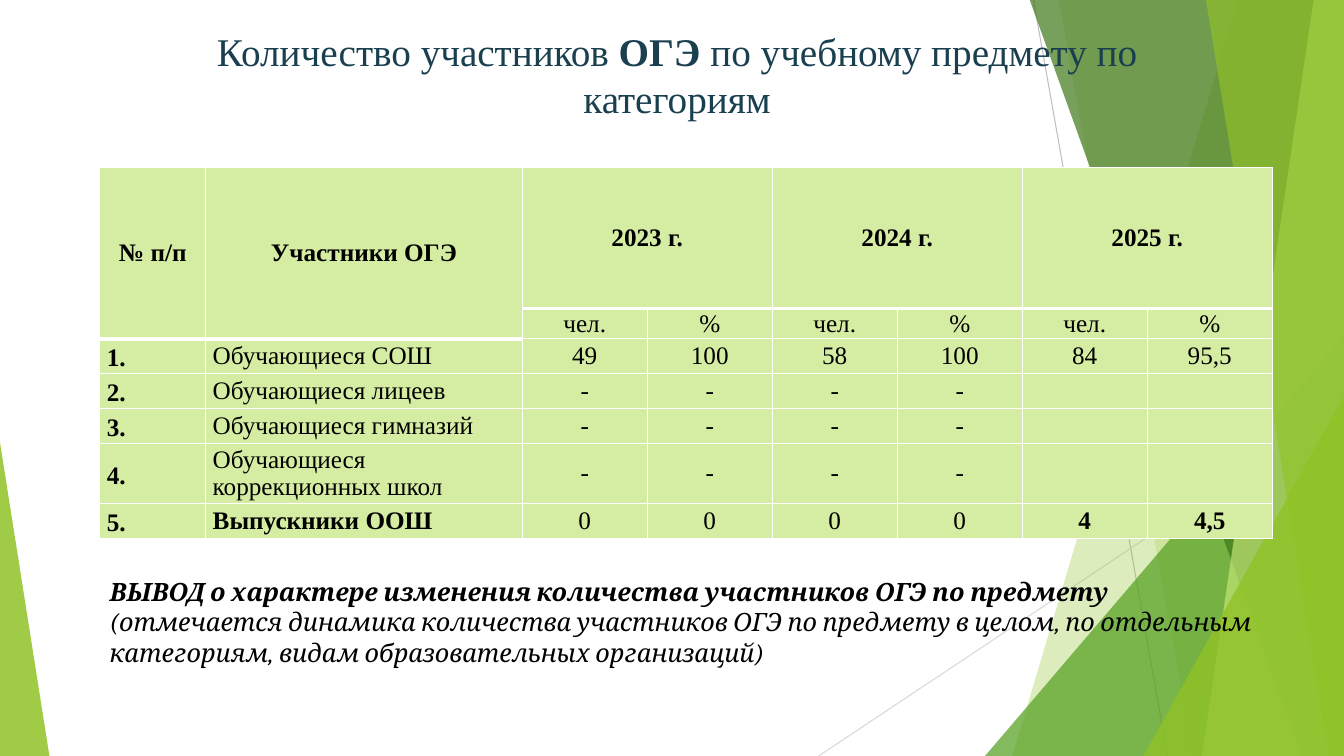
"""Build a slide with a table of exam participants by category over three years."""
from lxml import etree
from pptx import Presentation
from pptx.dml.color import RGBColor
from pptx.enum.shapes import MSO_CONNECTOR, MSO_SHAPE
from pptx.enum.text import MSO_ANCHOR, PP_ALIGN
from pptx.oxml.ns import qn
from pptx.util import Inches, Pt

STRAIGHT = MSO_CONNECTOR.STRAIGHT
TRIANGLE = MSO_SHAPE.ISOSCELES_TRIANGLE
CENTER, LEFT = PP_ALIGN.CENTER, PP_ALIGN.LEFT
MIDDLE = MSO_ANCHOR.MIDDLE
SERIF = "Times New Roman"


def rgb(color):
    return RGBColor.from_string(color)


def paint(facet, color, opacity):
    facet.shadow.inherit = False
    facet.line.fill.background()
    facet.fill.solid()
    facet.fill.fore_color.rgb = rgb(color)
    tint = facet.fill._xPr.find(".//" + qn("a:srgbClr"))
    etree.SubElement(tint, qn("a:alpha"), val=str(opacity * 1000))


prs = Presentation()
prs.slide_width, prs.slide_height = Inches(13.33), Inches(7.5)
slide = prs.slides.add_slide(prs.slide_layouts[6])
shapes = slide.shapes

for x1, y1, x2, y2, color in [(10.25, 0, 11.58, 7.5, "BFBFBF"),
                              (13.33, 4.03, 8.12, 7.5, "D9D9D9")]:
    ray = shapes.add_connector(STRAIGHT, Inches(x1), Inches(y1), Inches(x2), Inches(y2))
    ray.line.color.rgb = rgb(color)
    ray.line.width = Pt(0.75)
    etree.SubElement(ray._element.spPr, qn("a:effectLst"))

facets = [
    ("band", 12.28, 10.04, "90C226", 30),
    ("band", 10.5, 11.83, "90C226", 20),
    ("triangle", 9.77, 3.33, 3.56, 1, "54A021", 72),
    ("band", 10.21, 12.91, "3F7819", 70),
    ("band", 13.03, 11.92, "C0E474", 70),
    ("band", 11.96, 13.18, "90C226", 65),
    ("triangle", 11.34, 3.93, 1.99, 1, "90C226", 80),
    ("triangle", 0, 4.39, 0.49, 0, "90C226", 85),
]
for kind, *geometry, color, opacity in facets:
    if kind == "band":
        top_x, bottom_x = geometry
        outline = shapes.build_freeform(Inches(top_x), Inches(-0.01))
        corners = [(13.33, -0.01), (13.33, 7.5), (bottom_x, 7.5)]
        outline.add_line_segments([(Inches(x), Inches(y)) for x, y in corners], close=True)
        facet = outline.convert_to_shape()
    else:
        left, top, width, apex = geometry
        facet = shapes.add_shape(TRIANGLE, Inches(left), Inches(top),
                                 Inches(width), Inches(7.5 - top))
        facet.adjustments[0] = apex
    paint(facet, color, opacity)

title = shapes.add_textbox(Inches(1.98), Inches(0.22), Inches(9.4), Inches(1.44)).text_frame
title.word_wrap = True
title.margin_left, title.margin_right = Inches(0.15), Inches(0.08)
heading = title.paragraphs[0]
heading.alignment = CENTER
heading.font.name, heading.font.size = SERIF, Pt(28)
heading.font.color.rgb = rgb("1A4050")
for words, bold in [("Количество участников ", False), ("ОГЭ", True),
                    (" по учебному предмету по категориям", False)]:
    run = heading.add_run()
    run.text = words
    run.font.bold = bold

rows = [
    ["№ п/п", "Участники ОГЭ", "2023 г.", "", "2024 г.", "", "2025 г.", ""],
    ["", ""] + ["чел.", "%"] * 3,
    ["1.", "Обучающиеся СОШ", "49", "100", "58", "100", "84", "95,5"],
    ["2.", "Обучающиеся лицеев"] + ["-"] * 4 + ["", ""],
    ["3.", "Обучающиеся гимназий"] + ["-"] * 4 + ["", ""],
    ["4.", "Обучающиеся коррекционных школ"] + ["-"] * 4 + ["", ""],
    ["5.", "Выпускники ООШ"] + ["0"] * 4 + ["4", "4,5"],
]
row_heights = [1.4, 0.27, 0.32, 0.32, 0.32, 0.55, 0.32]
column_widths = [1.05, 3.14] + [1.24] * 6
participants = shapes.add_table(len(rows), len(column_widths), Inches(0.99), Inches(1.66),
                                Inches(sum(column_widths)), Inches(sum(row_heights))).table
participants.first_row = participants.horz_banding = False
for row, height in zip(participants.rows, row_heights):
    row.height = Inches(height)
for column, width in zip(participants.columns, column_widths):
    column.width = Inches(width)

for r, row_texts in enumerate(rows):
    for c, text in enumerate(row_texts):
        cell = participants.cell(r, c)
        header_end = 1 if c < 2 else 0
        edges = {"a:lnL": 1, "a:lnR": 1,
                 "a:lnT": 3 if r == header_end + 1 else 1,
                 "a:lnB": 3 if r == header_end else 1}
        properties = cell._tc.get_or_add_tcPr()
        for edge, weight in edges.items():
            border = etree.SubElement(properties, qn(edge), w=str(Pt(weight)))
            etree.SubElement(etree.SubElement(border, qn("a:solidFill")),
                             qn("a:srgbClr"), val="FFFFFF")
        cell.fill.solid()
        cell.fill.fore_color.rgb = rgb("D5EDA2")
        cell.vertical_anchor = MIDDLE
        cell.margin_left = cell.margin_right = Inches(0.07)
        cell.margin_top = cell.margin_bottom = 0
        cell.text = text
        entry = cell.text_frame.paragraphs[0]
        entry.alignment = LEFT if r > 1 and c < 2 else CENTER
        if r > 1 and c == 0:
            entry.line_spacing = 1.15
        entry.font.name, entry.font.size = SERIF, Pt(18)
        entry.font.color.rgb = rgb("000000")
        entry.font.bold = r == 0 or c == 0 or (r == 6 and c in (1, 6, 7))

for c in (0, 1):
    participants.cell(0, c).merge(participants.cell(1, c))
for c in (2, 4, 6):
    participants.cell(0, c).merge(participants.cell(0, c + 1))

conclusion = shapes.add_textbox(Inches(0.99), Inches(5.67), Inches(11.66), Inches(1.01)).text_frame
conclusion.word_wrap = True
summary = conclusion.paragraphs[0]
summary.font.name, summary.font.size = "Cambria", Pt(18)
summary.font.italic = True
summary.font.color.rgb = rgb("000000")
for words, bold in [
    ("ВЫВОД о характере изменения количества участников ОГЭ по предмету ", True),
    ("(отмечается динамика количества участников ОГЭ по предмету в целом, "
     "по отдельным категориям, видам образовательных организаций)", False),
]:
    run = summary.add_run()
    run.text = words
    run.font.bold = bold

prs.save("out.pptx")
